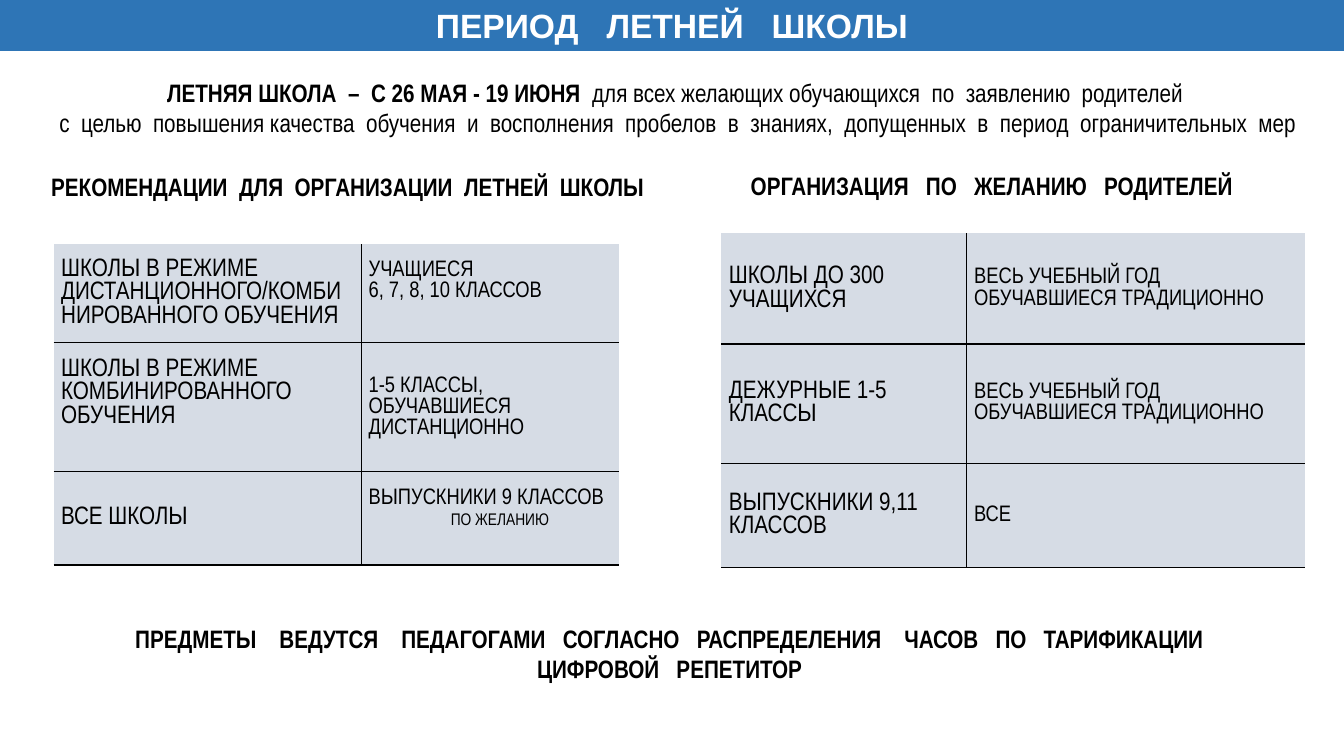
from pptx import Presentation
from pptx.dml.color import RGBColor
from pptx.enum.text import MSO_ANCHOR as Anchor, MSO_AUTO_SIZE as AutoSize, PP_ALIGN as Align
from pptx.oxml.ns import qn
from pptx.util import Cm, Pt
from lxml.etree import SubElement

BLUE, GREY, BLACK, WHITE = "2E75B6", "D6DCE5", "000000", "FFFFFF"


def rgb(value):
    return RGBColor.from_string(value)


class SlideBuilder:
    heading_font = "Arial"
    text_font = "Arial Narrow"

    def __init__(self, prs):
        self.slide = prs.slides.add_slide(prs.slide_layouts[5])

    def style(self, font, size, color=BLACK, bold=False, name=None):
        font.name = name or self.text_font
        font.size = Pt(size)
        font.bold = bold
        font.color.rgb = rgb(color)

    def title(self, text, width, height):
        sp = self.slide.shapes.title
        sp.left, sp.top, sp.width, sp.height = Cm(0), Cm(0), Cm(width), Cm(height)
        sp.fill.solid()
        sp.fill.fore_color.rgb = rgb(BLUE)
        tf = sp.text_frame
        tf.auto_size = AutoSize.NONE
        tf.vertical_anchor = Anchor.MIDDLE
        tf.text = text
        p = tf.paragraphs[0]
        p.alignment = Align.CENTER
        self.style(p.font, 24, WHITE, True, self.heading_font)

    def text(self, lines, left, top, width, height, align=Align.LEFT):
        sp = self.slide.shapes.add_textbox(Cm(left), Cm(top), Cm(width), Cm(height))
        tf = sp.text_frame
        tf.word_wrap = True
        for i, runs in enumerate(lines):
            p = tf.add_paragraph() if i else tf.paragraphs[0]
            p.alignment = align
            self.style(p.font, 18, bold=runs[0][1])
            for content, bold in runs:
                r = p.add_run()
                r.text = content
                if bold != runs[0][1]:
                    r.font.bold = bold

    def borders(self, cell, visible):
        tcPr = cell._tc.get_or_add_tcPr()
        for side in "LRTB":
            ln = SubElement(tcPr, qn(f"a:ln{side}"), w=str(Pt(1)))
            if side in visible:
                fill = SubElement(ln, qn("a:solidFill"))
                SubElement(fill, qn("a:srgbClr"), val=BLACK)
            else:
                SubElement(ln, qn("a:noFill"))

    def cell(self, cell, lines, visible, raise_by):
        self.borders(cell, visible)
        cell.fill.solid()
        cell.fill.fore_color.rgb = rgb(GREY)
        cell.vertical_anchor = Anchor.MIDDLE
        cell.margin_left = cell.margin_right = Cm(0.19)
        cell.margin_top = Cm(0.1)
        cell.margin_bottom = Cm(0.1 + raise_by)
        tf = cell.text_frame
        for i, (content, size, indent) in enumerate(lines):
            p = tf.add_paragraph() if i else tf.paragraphs[0]
            p.text = content
            self.style(p.font, size)
            if indent:
                p.space_before = Pt(3)
                p._p.get_or_add_pPr().set("marL", str(Cm(indent)))

    def table(self, rows, left, top, widths, heights):
        frame = self.slide.shapes.add_table(
            len(rows), len(widths), Cm(left), Cm(top), Cm(sum(widths)), Cm(sum(heights)))
        table = frame.table
        table.first_row = table.horz_banding = False
        for column, width in zip(table.columns, widths):
            column.width = Cm(width)
        for i, (row, height) in enumerate(zip(rows, heights)):
            table.rows[i].height = Cm(height)
            for j, (lines, raise_by) in enumerate(row):
                visible = "B" + ("T" if i else "") + ("L" if j else "R")
                self.cell(table.cell(i, j), lines, visible, raise_by)


def school(text, raise_by=0):
    return [(text, 18, 0)], raise_by


def pupils(*texts, raise_by=0):
    return [(text, 16, 0) for text in texts], raise_by


def main():
    prs = Presentation()
    prs.slide_width, prs.slide_height = Cm(33.87), Cm(19.05)
    s = SlideBuilder(prs)
    s.title("ПЕРИОД   ЛЕТНЕЙ   ШКОЛЫ", 33.87, 1.28)
    s.text([
        [("ЛЕТНЯЯ ШКОЛА  –  С 26 МАЯ - 19 ИЮНЯ  ", True),
         ("для всех желающих обучающихся  по  заявлению  родителей ", False)],
        [("с  целью  повышения качества  обучения  и  восполнения  пробелов  в  знаниях,  "
          "допущенных  в  период  ограничительных  мер", False)],
    ], 1.02, 1.83, 32.13, 1.8, Align.CENTER)

    s.text([[("РЕКОМЕНДАЦИИ  ДЛЯ  ОРГАНИЗАЦИИ  ЛЕТНЕЙ  ШКОЛЫ", True)]], 1.04, 4.19, 16.03, 1.02)
    s.text([[("ОРГАНИЗАЦИЯ   ПО   ЖЕЛАНИЮ   РОДИТЕЛЕЙ", True)]], 18.67, 4.17, 13.59, 1.02)

    graduates = [("ВЫПУСКНИКИ 9 КЛАССОВ", 16, 0), ("ПО ЖЕЛАНИЮ", 12, 2.07)]
    s.table([
        [school("ШКОЛЫ В РЕЖИМЕ ДИСТАНЦИОННОГО/КОМБИНИРОВАННОГО ОБУЧЕНИЯ"),
         pupils("УЧАЩИЕСЯ", "6, 7, 8, 10 КЛАССОВ", raise_by=0.6)],
        [school("ШКОЛЫ В РЕЖИМЕ КОМБИНИРОВАННОГО ОБУЧЕНИЯ", raise_by=0.7),
         pupils("1-5 КЛАССЫ, ОБУЧАВШИЕСЯ ДИСТАНЦИОННО")],
        [school("ВСЕ ШКОЛЫ"), (graduates, 0.5)],
    ], 1.35, 6.15, [7.75, 6.5], [2.48, 3.25, 2.35])

    all_year = pupils("ВЕСЬ УЧЕБНЫЙ ГОД ОБУЧАВШИЕСЯ ТРАДИЦИОННО")
    s.table([
        [school("ШКОЛЫ ДО 300 УЧАЩИХСЯ"), all_year],
        [school("ДЕЖУРНЫЕ 1-5 КЛАССЫ"), all_year],
        [school("ВЫПУСКНИКИ 9,11 КЛАССОВ"), pupils("ВСЕ")],
    ], 18.18, 5.88, [6.18, 8.53], [2.79, 3, 2.64])

    s.text([
        [("ПРЕДМЕТЫ    ВЕДУТСЯ    ПЕДАГОГАМИ   СОГЛАСНО   РАСПРЕДЕЛЕНИЯ    "
          "ЧАСОВ   ПО   ТАРИФИКАЦИИ", True)],
        [("ЦИФРОВОЙ   РЕПЕТИТОР", True)],
    ], 2.31, 15.57, 29.13, 1.8, Align.CENTER)
    prs.save("out.pptx")


if __name__ == "__main__":
    main()
